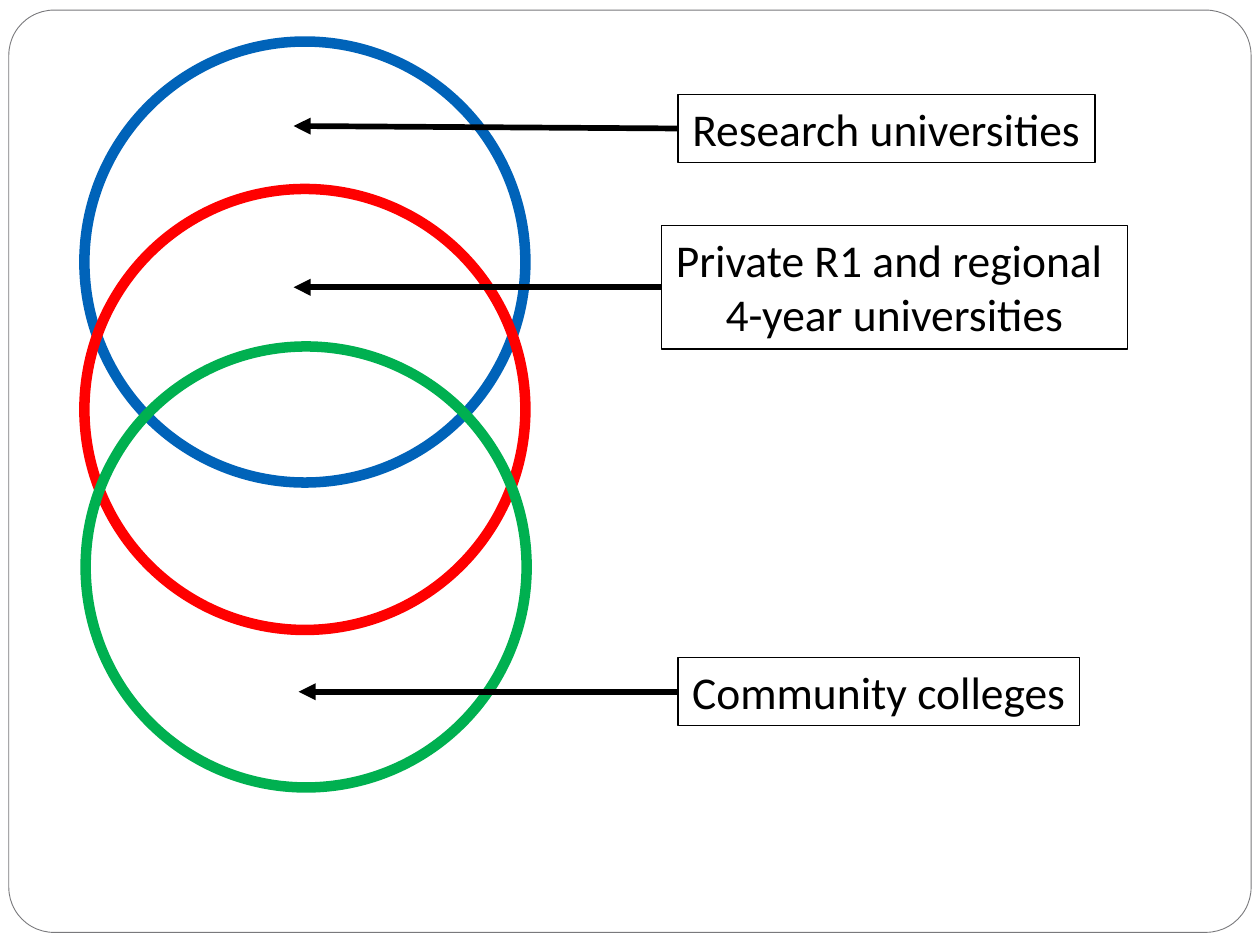
from dataclasses import dataclass

from lxml.etree import SubElement
from pptx import Presentation
from pptx.dml.color import RGBColor
from pptx.enum.shapes import MSO_CONNECTOR as Connector, MSO_SHAPE as Preset
from pptx.enum.text import MSO_ANCHOR as Anchor, MSO_AUTO_SIZE as AutoSize, PP_ALIGN as Align
from pptx.oxml.ns import qn
from pptx.util import Inches, Pt

WIDTH, HEIGHT = 10, 7.5
FONT, TEXT_SIZE = "Calibri", 26
DIAMETER = 3.5
COLORS = {
    "white": "FFFFFF", "frame": "79797C", "black": "000000",
    "blue": "0063B9", "red": "FF0000", "green": "00B050",
}


@dataclass
class Ring:
    left: float
    top: float
    color: str


@dataclass
class Label:
    lines: tuple[str, ...]
    left: float
    top: float
    width: float
    height: float
    tip: tuple[float, float]


RINGS = [
    Ring(0.67, 0.33, "blue"),
    Ring(0.67, 1.5, "red"),
    Ring(0.68, 2.75, "green"),
]
LABELS = [
    Label(("Research universities",), 5.38, 0.75, 3.31, 0.54, (2.33, 1)),
    Label(("Private R1 and regional ", "4-year universities"),
          5.25, 1.79, 3.7, 0.98, (2.33, 2.28)),
    Label(("Community colleges",), 5.38, 5.22, 3.19, 0.54, (2.37, 5.49)),
]


def rgb(name: str) -> RGBColor:
    return RGBColor.from_string(COLORS[name])


def set_line(line, color: str, width: float) -> None:
    line.color.rgb = rgb(color)
    line.width = Pt(width)


def draw_frame(page) -> None:
    left, top = 0.07, 0.08
    frame = page.shapes.add_shape(
        Preset.ROUNDED_RECTANGLE, Inches(left), Inches(top),
        Inches(WIDTH - 2 * left), Inches(7.32))
    frame.adjustments[0] = 0.049
    frame.shadow.inherit = False
    frame.fill.solid()
    frame.fill.fore_color.rgb = rgb("white")
    set_line(frame.line, "frame", 0.5)


def draw_ring(page, ring: Ring) -> None:
    circle = page.shapes.add_shape(
        Preset.OVAL, Inches(ring.left), Inches(ring.top),
        Inches(DIAMETER), Inches(DIAMETER))
    circle.shadow.inherit = False
    circle.fill.background()
    set_line(circle.line, ring.color, 6)


def draw_label(page, label: Label):
    box = page.shapes.add_textbox(
        Inches(label.left), Inches(label.top),
        Inches(label.width), Inches(label.height))
    set_line(box.line, "black", 0.75)
    frame = box.text_frame
    frame.word_wrap = False
    frame.auto_size = AutoSize.SHAPE_TO_FIT_TEXT
    frame.vertical_anchor = Anchor.TOP
    for index, text in enumerate(label.lines):
        para = frame.add_paragraph() if index else frame.paragraphs[0]
        para.alignment = Align.CENTER
        span = para.add_run()
        span.text = text
        span.font.name = FONT
        span.font.size = Pt(TEXT_SIZE)
        span.font.color.rgb = rgb("black")
    return box


def draw_arrow(page, box, tip: tuple[float, float]) -> None:
    tip_x, tip_y = map(Inches, tip)
    arrow = page.shapes.add_connector(
        Connector.STRAIGHT, box.left, box.top + box.height // 2, tip_x, tip_y)
    arrow.begin_connect(box, 1)
    set_line(arrow.line, "black", 3.25)
    SubElement(arrow.line._get_or_add_ln(), qn("a:tailEnd"), type="triangle")
    SubElement(arrow._element.spPr, qn("a:effectLst"))


def main() -> None:
    deck = Presentation()
    deck.slide_width, deck.slide_height = Inches(WIDTH), Inches(HEIGHT)
    page = deck.slides.add_slide(deck.slide_layouts[6])

    # Rounded border and overlapping rings
    draw_frame(page)
    for ring in RINGS:
        draw_ring(page, ring)

    # Labels, then the arrows from their left sides into the rings
    boxes = [draw_label(page, label) for label in LABELS]
    for box, label in zip(boxes, LABELS):
        draw_arrow(page, box, label.tip)

    deck.save("out.pptx")


if __name__ == "__main__":
    main()
